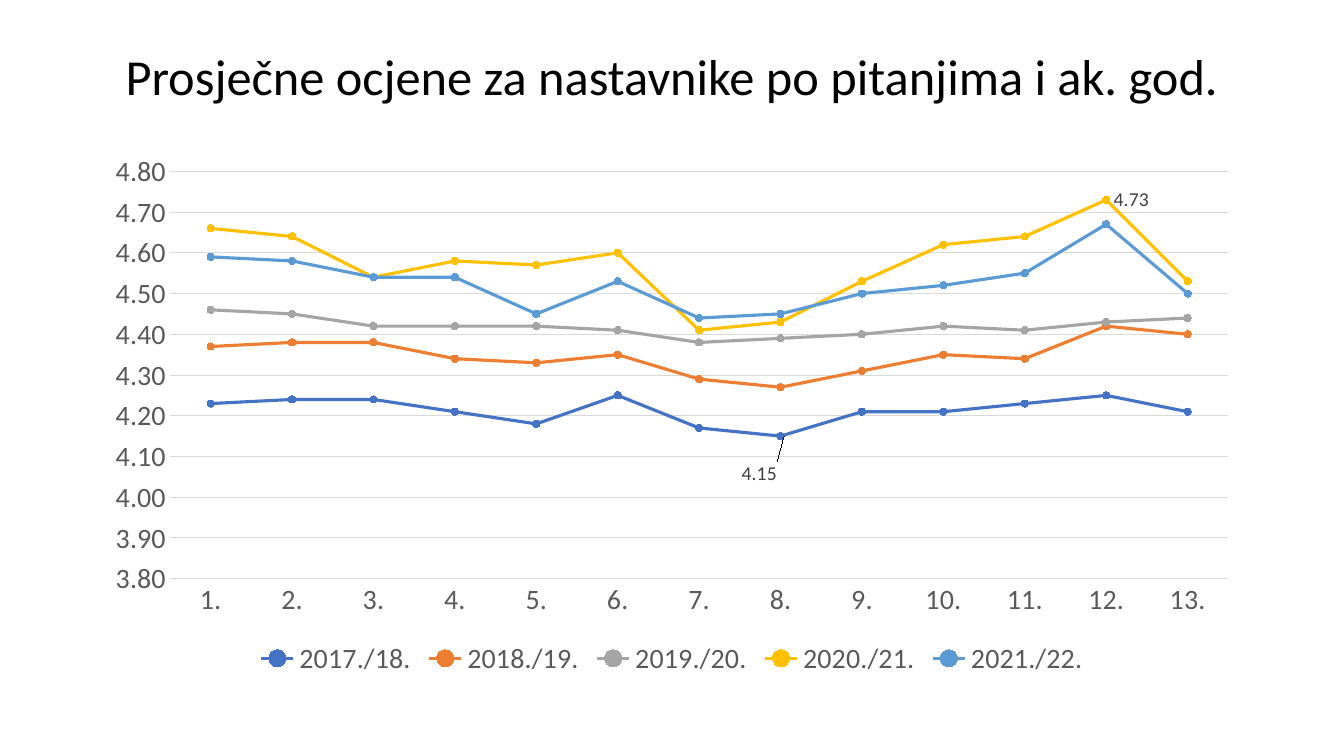
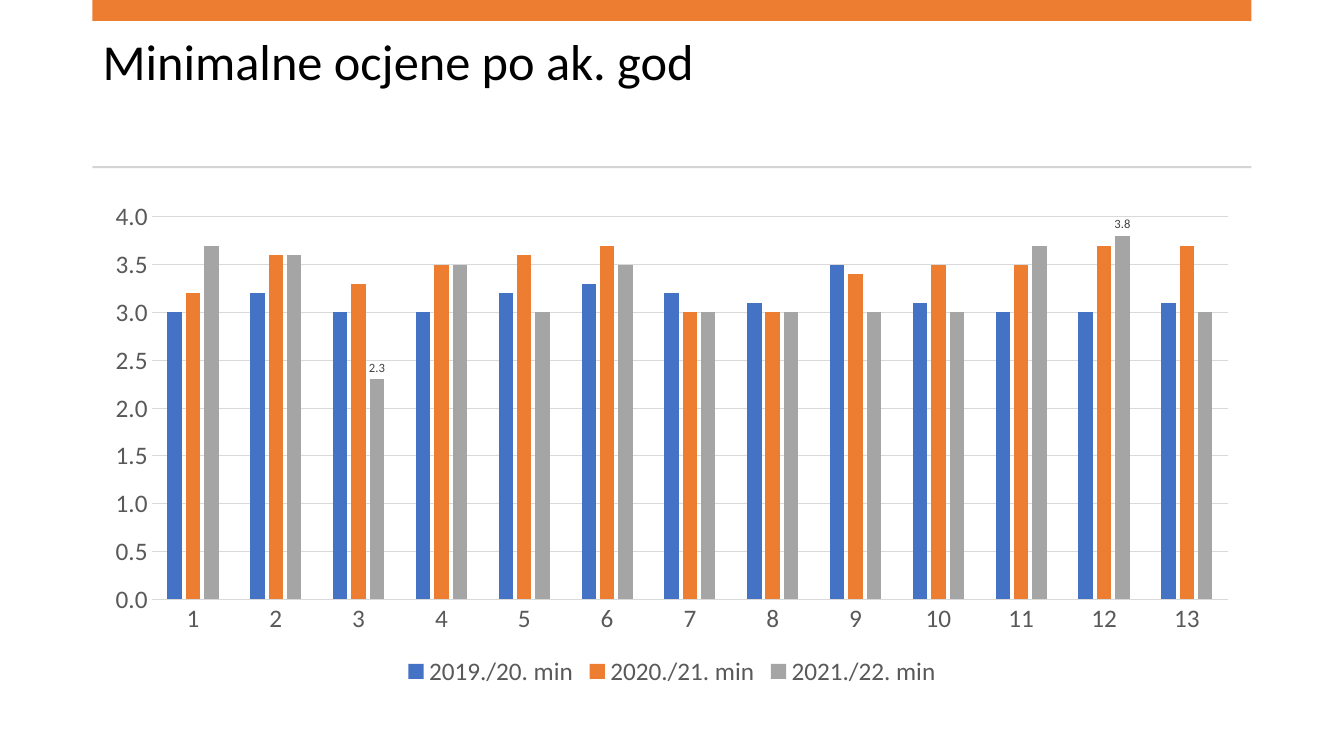
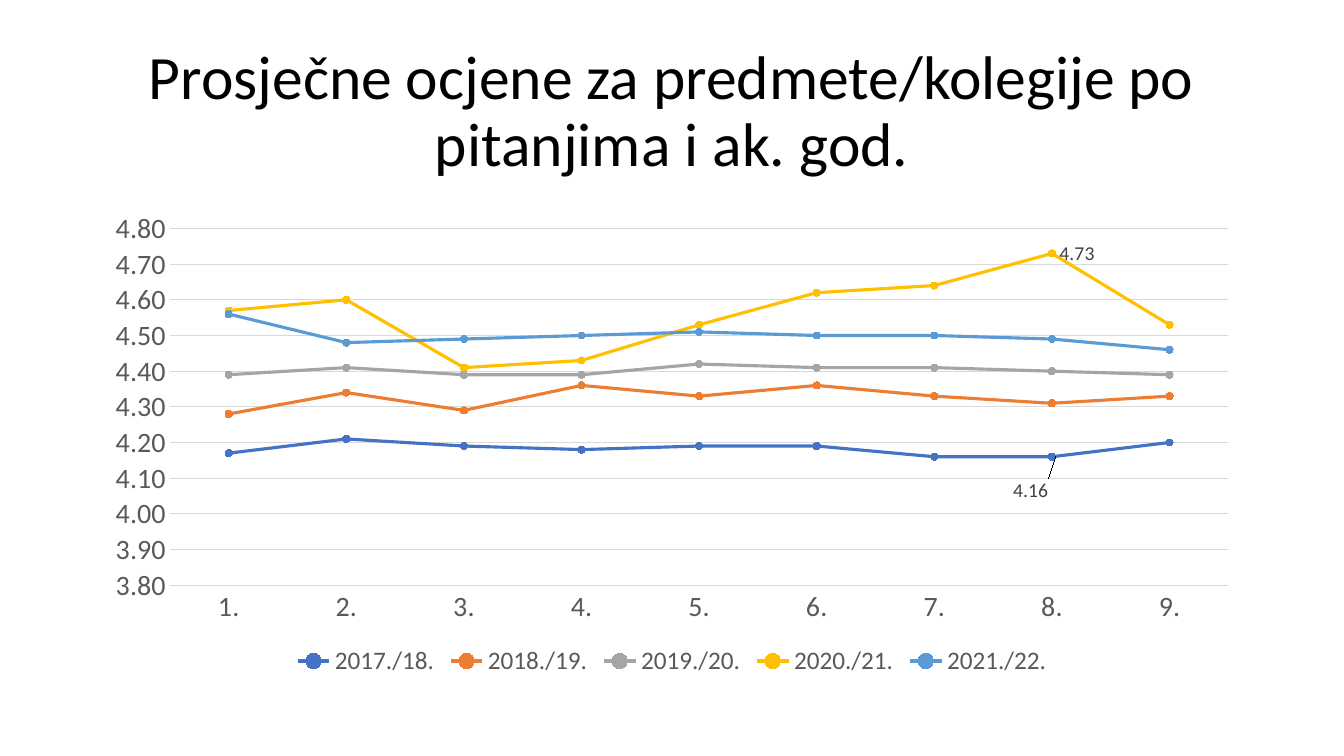
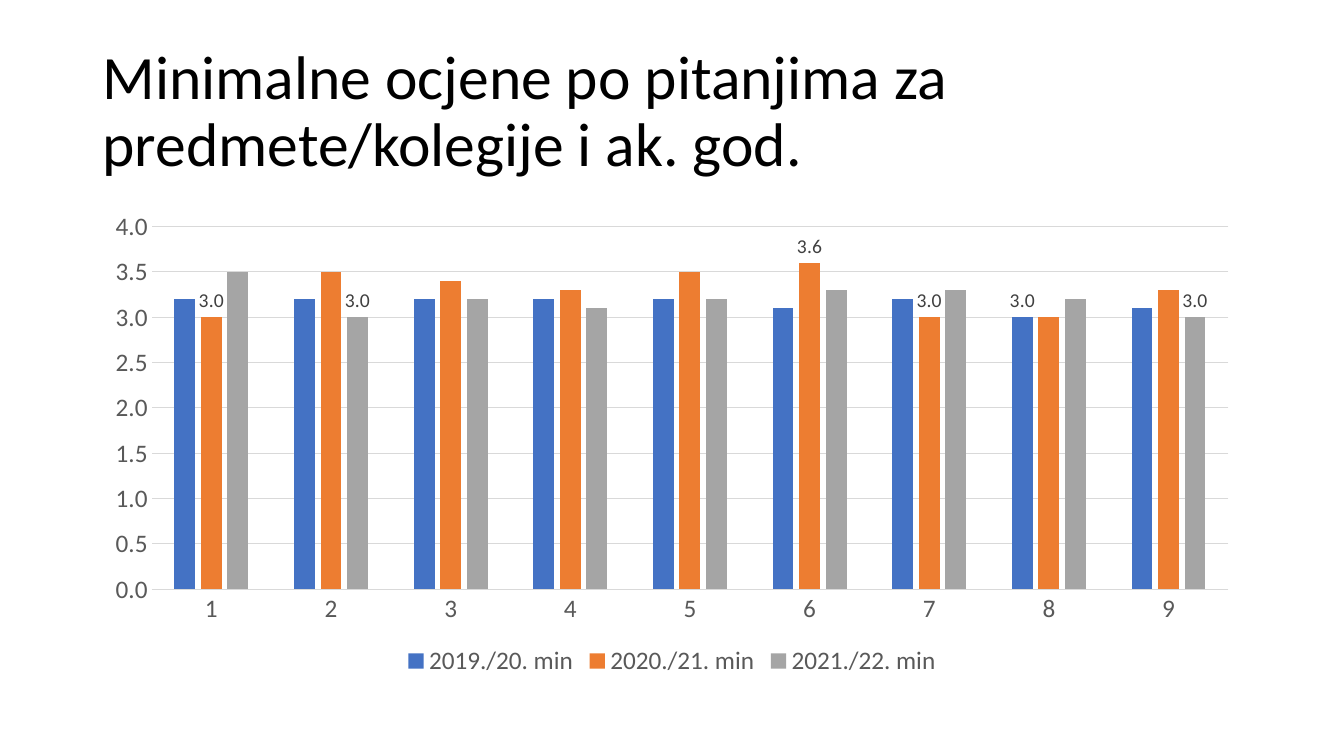
from dataclasses import dataclass

from lxml.etree import SubElement
from pptx import Presentation
from pptx.chart.chart import Chart
from pptx.chart.data import CategoryChartData
from pptx.dml.color import RGBColor
from pptx.enum.chart import (XL_CHART_TYPE, XL_LABEL_POSITION, XL_LEGEND_POSITION,
                             XL_MARKER_STYLE, XL_TICK_MARK)
from pptx.enum.shapes import MSO_SHAPE
from pptx.enum.text import MSO_ANCHOR, MSO_AUTO_SIZE, PP_ALIGN
from pptx.oxml import parse_xml
from pptx.oxml.ns import nsdecls, qn
from pptx.slide import Slide
from pptx.text.text import Font, TextFrame
from pptx.util import Cm, Pt

FONT = "Calibri"
COLORS = {
    "black": "000000", "text": "595959", "label": "404040", "grid": "D9D9D9",
    "rule": "D5D5D5", "blue": "4472C4", "orange": "ED7D31", "gray": "A5A5A5",
    "gold": "FFC000", "sky": "5B9BD5",
}
CYCLE = ("blue", "orange", "gray", "gold", "sky")
LEFT, WIDTH = 2.33, 29.21
YEARS = ("2017./18.", "2018./19.", "2019./20.", "2020./21.", "2021./22.")
MINS = ("2019./20. min", "2020./21. min", "2021./22. min")


@dataclass(frozen=True)
class Style:
    kind: XL_CHART_TYPE
    low: float
    high: float
    step: float
    form: str
    mark: str
    names: tuple[str, ...]
    place: XL_LABEL_POSITION


@dataclass(frozen=True)
class Label:
    row: int
    point: int
    shift: tuple[float, float] | None = None


@dataclass(frozen=True)
class Page:
    title: str
    style: Style
    rows: tuple[tuple[float, ...], ...]
    labels: tuple[Label, ...]
    top: float
    height: float
    size: int = 44
    align: PP_ALIGN = PP_ALIGN.LEFT
    head: tuple[float, float] = (1.01, 3.68)
    inset: float | None = None
    axis: int = 18
    legend: int = 18
    note: int = 14
    band: bool = False


LINES = Style(XL_CHART_TYPE.LINE_MARKERS, 3.8, 4.8, 0.1, "0.00", ".", YEARS,
              XL_LABEL_POSITION.RIGHT)
BARS = Style(XL_CHART_TYPE.COLUMN_CLUSTERED, 0, 4, 0.5, "0.0", "", MINS,
             XL_LABEL_POSITION.OUTSIDE_END)

PAGES = (
    Page("Prosječne ocjene za nastavnike po pitanjima i ak. god.", LINES, (
        (4.23, 4.24, 4.24, 4.21, 4.18, 4.25, 4.17, 4.15, 4.21, 4.21, 4.23, 4.25, 4.21),
        (4.37, 4.38, 4.38, 4.34, 4.33, 4.35, 4.29, 4.27, 4.31, 4.35, 4.34, 4.42, 4.4),
        (4.46, 4.45, 4.42, 4.42, 4.42, 4.41, 4.38, 4.39, 4.4, 4.42, 4.41, 4.43, 4.44),
        (4.66, 4.64, 4.54, 4.58, 4.57, 4.6, 4.41, 4.43, 4.53, 4.62, 4.64, 4.73, 4.53),
        (4.59, 4.58, 4.54, 4.54, 4.45, 4.53, 4.44, 4.45, 4.5, 4.52, 4.55, 4.67, 4.5),
    ), (Label(0, 7, (-0.04, 0.07)), Label(3, 11)), 3.61, 13.56,
        size=36, align=PP_ALIGN.CENTER, inset=0.29, axis=20, legend=20),
    Page("Minimalne ocjene po ak. god", BARS, (
        (3, 3.2, 3, 3, 3.2, 3.3, 3.2, 3.1, 3.5, 3.1, 3, 3, 3.1),
        (3.2, 3.6, 3.3, 3.5, 3.6, 3.7, 3, 3, 3.4, 3.5, 3.5, 3.7, 3.7),
        (3.7, 3.6, 2.3, 3.5, 3, 3.5, 3, 3, 3, 3, 3.7, 3.8, 3),
    ), (Label(2, 2), Label(2, 11)), 4.83, 12.6,
        size=36, head=(0.94, 3), inset=0, note=9, band=True),
    Page("Prosječne ocjene za predmete/kolegije po pitanjima i ak. god.", LINES, (
        (4.17, 4.21, 4.19, 4.18, 4.19, 4.19, 4.16, 4.16, 4.2),
        (4.28, 4.34, 4.29, 4.36, 4.33, 4.36, 4.33, 4.31, 4.33),
        (4.39, 4.41, 4.39, 4.39, 4.42, 4.41, 4.41, 4.4, 4.39),
        (4.57, 4.6, 4.41, 4.43, 4.53, 4.62, 4.64, 4.73, 4.53),
        (4.56, 4.48, 4.49, 4.5, 4.51, 4.5, 4.5, 4.49, 4.46),
    ), (Label(0, 7, (-0.04, 0.07)), Label(3, 7)), 5.08, 12.09,
        align=PP_ALIGN.CENTER, axis=20),
    Page("Minimalne ocjene po pitanjima za predmete/kolegije i ak. god.", BARS, (
        (3.2, 3.2, 3.2, 3.2, 3.2, 3.1, 3.2, 3, 3.1),
        (3, 3.5, 3.4, 3.3, 3.5, 3.6, 3, 3, 3.3),
        (3.5, 3, 3.2, 3.1, 3.2, 3.3, 3.3, 3.2, 3),
    ), (Label(0, 7), Label(1, 0), Label(1, 5), Label(1, 6), Label(2, 1), Label(2, 8)),
        5.08, 12.09),
)


def shade(name: str) -> RGBColor:
    return RGBColor.from_string(COLORS[name])


def ink(font: Font, size: int, color: str) -> None:
    font.name, font.size, font.bold = FONT, Pt(size), False
    font.color.rgb = shade(color)


def write(frame: TextFrame, text: str, *, size: int, color: str = "black",
          align: PP_ALIGN = PP_ALIGN.LEFT, inset: float | None = None) -> None:
    frame.auto_size, frame.word_wrap = MSO_AUTO_SIZE.NONE, True
    frame.vertical_anchor = MSO_ANCHOR.MIDDLE if inset is None else MSO_ANCHOR.TOP
    if inset is not None:
        frame.margin_top = Cm(inset)
    line = frame.paragraphs[0]
    line.alignment, line.line_spacing = align, 0.9
    run = line.add_run()
    run.text = text
    ink(run.font, size, color)


def strip(slide: Slide, top: float, height: float, color: str) -> None:
    bar = slide.shapes.add_shape(MSO_SHAPE.RECTANGLE, Cm(LEFT), Cm(top), Cm(WIDTH), Cm(height))
    bar.shadow.inherit = False
    bar.fill.solid()
    bar.fill.fore_color.rgb = shade(color)
    bar.line.fill.background()


def scale(chart: Chart, page: Page) -> None:
    style = page.style
    for axis in (chart.category_axis, chart.value_axis):
        axis.major_tick_mark = axis.minor_tick_mark = XL_TICK_MARK.NONE
        ink(axis.tick_labels.font, page.axis, "text")
    base, side = chart.category_axis, chart.value_axis
    side.minimum_scale, side.maximum_scale = style.low, style.high
    side.major_unit = style.step
    side.tick_labels.number_format = style.form
    side.tick_labels.number_format_is_linked = False
    side.format.line.fill.background()
    for line in (base.format.line, side.major_gridlines.format.line):
        line.color.rgb = shade("grid")
        line.width = Pt(0.75)


def paint(chart: Chart, style: Style) -> None:
    plot = chart.plots[0]
    plot.vary_by_categories = False
    if style is BARS:
        plot.gap_width, plot.overlap = 219, -27
    for row, name in zip(plot.series, CYCLE):
        fills = [row.format.fill]
        if style is LINES:
            row.smooth = False
            row.format.line.color.rgb = shade(name)
            row.format.line.width = Pt(2.25)
            row.marker.style, row.marker.size = XL_MARKER_STYLE.CIRCLE, 5
            row.marker.format.line.color.rgb = shade(name)
            fills = [row.marker.format.fill]
        for fill in fills:
            fill.solid()
            fill.fore_color.rgb = shade(name)


def tag(chart: Chart, page: Page, label: Label) -> None:
    row = chart.plots[0].series[label.row]
    row.data_labels.show_value = False
    note = row.points[label.point].data_label
    ink(note.font, page.note, "label")
    note.position = page.style.place
    if label.shift is None:
        return
    x, y = label.shift
    group = row.data_labels._element
    item = group.find(qn("c:dLbl"))
    item.insert(1, parse_xml(
        f'<c:layout {nsdecls("c")}><c:manualLayout><c:x val="{x}"/><c:y val="{y}"/>'
        '</c:manualLayout></c:layout>'))
    lead = group.find(qn("c:showLeaderLines"))
    if lead is None:
        lead = SubElement(group, qn("c:showLeaderLines"))
    lead.set("val", "1")


def plot(slide: Slide, page: Page) -> None:
    style = page.style
    data = CategoryChartData(number_format=style.form)
    data.categories = [f"{n}{style.mark}" for n in range(1, len(page.rows[0]) + 1)]
    for name, row in zip(style.names, page.rows):
        data.add_series(name, row)
    chart = slide.shapes.add_chart(style.kind, Cm(LEFT), Cm(page.top), Cm(WIDTH),
                                   Cm(page.height), data).chart
    chart.has_title = False
    ink(chart.font, 10, "black")
    chart.has_legend = True
    chart.legend.position = XL_LEGEND_POSITION.BOTTOM
    chart.legend.include_in_layout = False
    ink(chart.legend.font, page.legend, "text")
    scale(chart, page)
    paint(chart, style)
    for label in page.labels:
        tag(chart, page, label)


def build(deck: Presentation, page: Page) -> None:
    slide = deck.slides.add_slide(deck.slide_layouts[5])
    title = slide.shapes.title
    top, height = page.head
    title.left, title.top, title.width, title.height = map(Cm, (LEFT, top, WIDTH, height))
    write(title.text_frame, page.title, size=page.size, align=page.align, inset=page.inset)
    if page.band:
        strip(slide, 0, 0.53, "orange")
        strip(slide, 4.19, 0.05, "rule")
    plot(slide, page)


def main() -> None:
    deck = Presentation()
    deck.slide_width, deck.slide_height = Cm(33.87), Cm(19.05)
    for page in PAGES:
        build(deck, page)
    deck.save("out.pptx")


if __name__ == "__main__":
    main()
